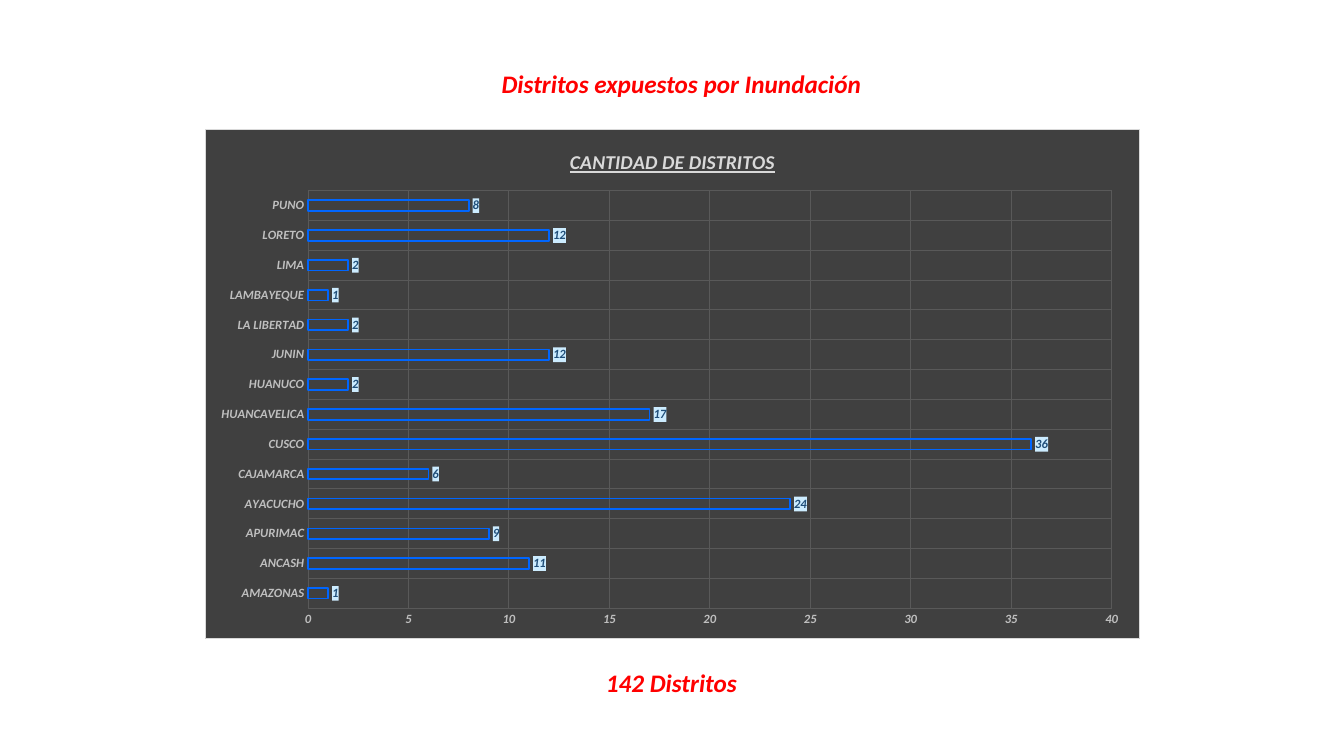
"""Build a slide with a bar chart of districts exposed to flooding."""
from dataclasses import dataclass

from lxml import etree
from pptx import Presentation
from pptx.chart.data import CategoryChartData
from pptx.dml.color import RGBColor
from pptx.enum.chart import XL_CHART_TYPE, XL_LABEL_POSITION, XL_TICK_MARK
from pptx.enum.text import MSO_ANCHOR, MSO_AUTO_SIZE, PP_ALIGN
from pptx.oxml import parse_xml
from pptx.oxml.ns import nsdecls, qn
from pptx.util import Pt

BAR = XL_CHART_TYPE.BAR_CLUSTERED
OUTSIDE = XL_LABEL_POSITION.OUTSIDE_END
NO_TICK = XL_TICK_MARK.NONE
MIDDLE = MSO_ANCHOR.MIDDLE
GROW = MSO_AUTO_SIZE.SHAPE_TO_FIT_TEXT
CENTER = PP_ALIGN.CENTER
SCALE = 9525

COUNTS = {
    "AMAZONAS": 1, "ANCASH": 11, "APURIMAC": 9, "AYACUCHO": 24,
    "CAJAMARCA": 6, "CUSCO": 36, "HUANCAVELICA": 17, "HUANUCO": 2,
    "JUNIN": 12, "LA LIBERTAD": 2, "LAMBAYEQUE": 1, "LIMA": 2,
    "LORETO": 12, "PUNO": 8,
}


@dataclass(frozen=True)
class Theme:
    face: str = "Calibri"
    accent: str = "FF0000"
    panel: str = "404040"
    border: str = "D9D9D9"
    grid: str = "595959"
    axis: str = "BFBFBF"
    bar: str = "0066FF"
    label: str = "1F4E79"
    mark: str = "CCECFF"
    head: int = 18
    title: int = 14
    small: int = 9


def px(*sizes):
    return [size * SCALE for size in sizes]


def assign(item, values):
    for name, value in values.items():
        setattr(item, name, value)


def shade(fill, line=None):
    edge = ""
    if line:
        edge = (f'<a:ln w="9525"><a:solidFill><a:srgbClr val="{line}"/>'
                '</a:solidFill></a:ln>')
    return parse_xml(f'<c:spPr {nsdecls("c", "a")}><a:solidFill>'
                     f'<a:srgbClr val="{fill}"/></a:solidFill>{edge}</c:spPr>')


class Board:
    def __init__(self, deck, theme):
        self.theme = theme
        self.slide = deck.slides.add_slide(deck.slide_layouts[5])

    def style(self, font, size, color, **extra):
        assign(font, {"name": self.theme.face, "size": Pt(size),
                      "bold": True, "italic": True, **extra})
        font.color.rgb = RGBColor.from_string(color)

    def stroke(self, line, color, width):
        line.color.rgb = RGBColor.from_string(color)
        line.width = Pt(width)

    def letter(self, shape, text, wrap):
        frame = shape.text_frame
        frame.text = text
        assign(frame, {"word_wrap": wrap, "auto_size": GROW,
                       "vertical_anchor": MIDDLE})
        line = frame.paragraphs[0]
        line.alignment = CENTER
        self.style(line.runs[0].font, self.theme.head, self.theme.accent)

    def title(self, text, box):
        shape = self.slide.shapes.title
        assign(shape, dict(zip(("left", "top", "width", "height"), px(*box))))
        self.letter(shape, text, False)

    def text(self, text, box):
        self.letter(self.slide.shapes.add_textbox(*px(*box)), text, True)

    def axis(self, axis):
        look = self.theme
        assign(axis, {"major_tick_mark": NO_TICK, "minor_tick_mark": NO_TICK,
                      "has_major_gridlines": True})
        axis.format.line.fill.background()
        self.stroke(axis.major_gridlines.format.line, look.grid, 0.75)
        self.style(axis.tick_labels.font, look.small, look.axis)

    def place(self, chart, **area):
        plot = chart.element.find(".//" + qn("c:plotArea"))
        for old in plot.findall(qn("c:layout")):
            plot.remove(old)
        layout = etree.Element(qn("c:layout"))
        manual = etree.SubElement(layout, qn("c:manualLayout"))
        parts = {"layoutTarget": "inner", "xMode": "edge", "yMode": "edge",
                 **area}
        for name, value in parts.items():
            etree.SubElement(manual, qn("c:" + name), val=str(value))
        plot.insert(0, layout)

    def chart(self, title, counts, box):
        look = self.theme
        data = CategoryChartData(number_format="#,##0")
        data.categories = list(counts)
        data.add_series("Series 1", list(counts.values()))
        chart = self.slide.shapes.add_chart(BAR, *px(*box), data).chart
        chart.has_legend = False
        self.style(chart.font, look.small, look.axis)
        chart.element.find(qn("c:chart")).addnext(
            shade(look.panel, look.border))

        frame = chart.chart_title.text_frame
        frame.text = title
        self.style(frame.paragraphs[0].runs[0].font, look.title,
                   look.border, underline=True)

        for axis in (chart.category_axis, chart.value_axis):
            self.axis(axis)
        assign(chart.value_axis, {"minimum_scale": 0, "maximum_scale": 40,
                                  "major_unit": 5})

        plot = chart.plots[0]
        assign(plot, {"gap_width": 182, "overlap": -50,
                      "vary_by_categories": False})
        bars = plot.series[0]
        bars.format.fill.background()
        self.stroke(bars.format.line, look.bar, 1.25)

        labels = bars.data_labels
        assign(labels, {"show_value": True, "number_format": "#,##0",
                        "number_format_is_linked": False,
                        "position": OUTSIDE})
        self.style(labels.font, look.small, look.label)
        text = chart.element.find(".//" + qn("c:dLbls") + "/" + qn("c:txPr"))
        text.addprevious(shade(look.mark))
        self.place(chart, x=0.11, y=0.12, w=0.86, h=0.82)


def main():
    deck = Presentation()
    deck.slide_width, deck.slide_height = px(1280, 720)
    board = Board(deck, Theme())
    board.title("Distritos expuestos por Inundación", (466, 60, 366, 38))
    board.text("142 Distritos", (567, 631, 145, 38))
    board.chart("CANTIDAD DE DISTRITOS", COUNTS, (195, 123, 891, 486))
    deck.save("out.pptx")


if __name__ == "__main__":
    main()
